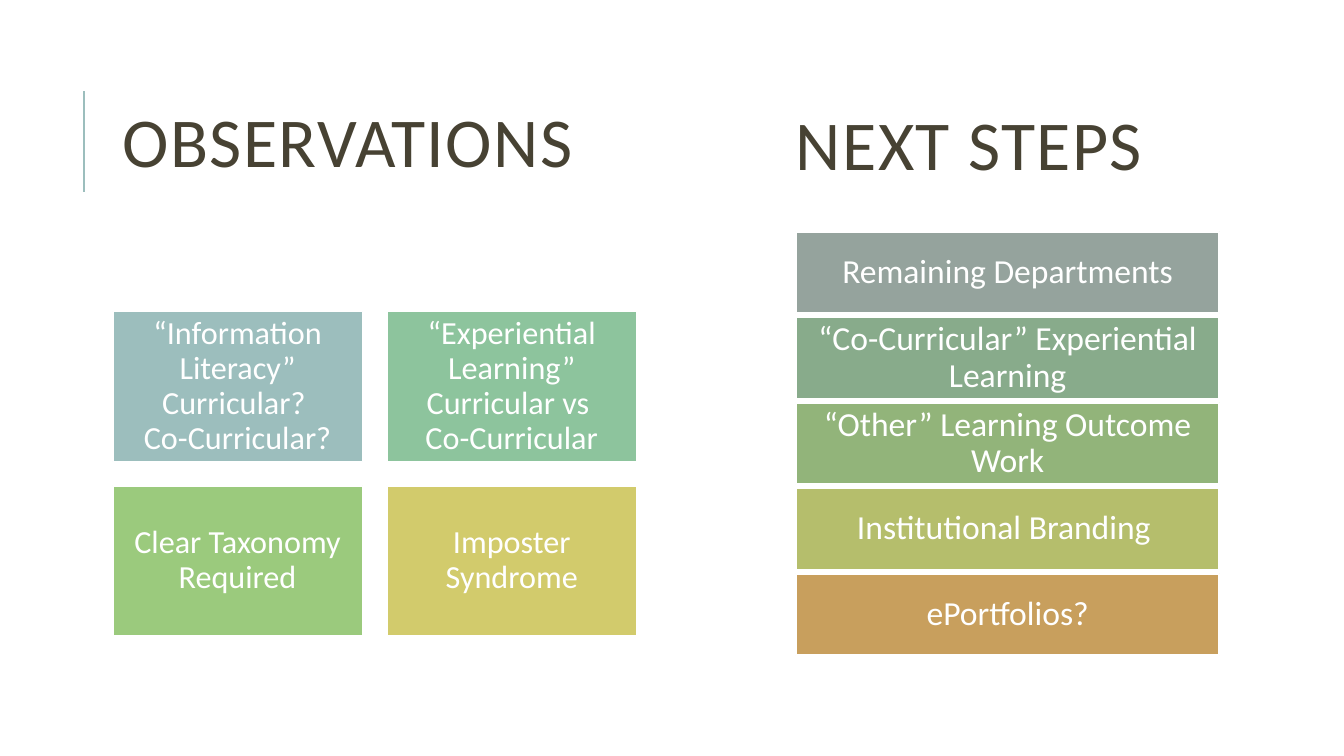
from pptx import Presentation
from pptx.dml.color import RGBColor
from pptx.enum.shapes import MSO_CONNECTOR, MSO_SHAPE
from pptx.enum.text import MSO_ANCHOR, PP_ALIGN
from pptx.oxml.ns import qn
from pptx.util import Cm, Pt
from lxml.etree import SubElement

OBSERVATIONS = [
    ("“Information Literacy” Curricular? \nCo-Curricular?", "9CBEBD"),
    ("“Experiential Learning” Curricular vs \nCo-Curricular", "8DC49D"),
    ("Clear Taxonomy Required", "9BCA7D"),
    ("Imposter Syndrome", "D2CB6C"),
]
NEXT_STEPS = [
    ("Remaining Departments", "95A39D"),
    ("“Co-Curricular” Experiential Learning", "88AB8B"),
    ("“Other” Learning Outcome Work", "92B47A"),
    ("Institutional Branding ", "B5BE6C"),
    ("ePortfolios?", "C89F5D"),
]


def color(hex_code):
    return RGBColor.from_string(hex_code)


def apply(target, formats):
    for name, value in formats.items():
        setattr(target, name, value)


def write(frame, words, size, hex_code, spacing, align, inset):
    apply(frame, {"word_wrap": True, "vertical_anchor": MSO_ANCHOR.MIDDLE,
                  "margin_left": Cm(inset[0]), "margin_right": Cm(inset[0]),
                  "margin_top": Cm(inset[1]), "margin_bottom": Cm(inset[1])})
    paragraph = frame.paragraphs[0]
    paragraph.text = words
    apply(paragraph, {"alignment": align, "line_spacing": spacing})
    for run in paragraph.runs:
        apply(run.font, {"name": "Calibri", "size": Pt(size)})
        run.font.color.rgb = color(hex_code)
    return paragraph


def add_heading(slide, words, left, top, width, height):
    heading = slide.shapes.add_textbox(Cm(left), Cm(top), Cm(width), Cm(height))
    paragraph = write(heading.text_frame, words, 50, "474233", 0.8,
                      PP_ALIGN.LEFT, (0.25, 0.13))
    for run in paragraph.runs:
        run.font._element.set("spc", "100")


def add_accent(slide, left, top, height):
    accent = slide.shapes.add_connector(
        MSO_CONNECTOR.STRAIGHT, Cm(left), Cm(top + height), Cm(left), Cm(top))
    accent.line.color.rgb = color("9CBEBD")
    accent.line.width = Pt(1.5)
    SubElement(accent._element.spPr, qn("a:effectLst"))


def add_tiles(slide, items, columns, gap, size, inset, left, top, width, height):
    rows = len(items) // columns
    tile_width = (width - gap * (columns - 1)) / columns
    tile_height = (height - gap * (rows - 1)) / rows
    for index, (words, fill) in enumerate(items):
        row, column = divmod(index, columns)
        tile = slide.shapes.add_shape(
            MSO_SHAPE.RECTANGLE,
            Cm(left + column * (tile_width + gap)),
            Cm(top + row * (tile_height + gap)),
            Cm(tile_width), Cm(tile_height))
        tile.shadow.inherit = False
        tile.fill.solid()
        tile.fill.fore_color.rgb = color(fill)
        tile.line.color.rgb = color("FFFFFF")
        tile.line.width = Pt(1.25)
        write(tile.text_frame, words, size, "FFFFFF", 0.9,
              PP_ALIGN.CENTER, (inset, inset))


def add_observations(slide, left, top, width):
    add_accent(slide, left - 0.73, top + 0.66, 2.54)
    add_heading(slide, "OBSERVATIONS", left, top, width, 4.17)
    add_tiles(slide, OBSERVATIONS, 2, 0.61, 23, 0.25,
              left, top + 6.22, width, 8.17)


def add_next_steps(slide, left, top, width):
    add_heading(slide, "NEXT STEPS", left, top, width, 4.17)
    add_tiles(slide, NEXT_STEPS, 1, 0.1, 24, 0.18,
              left + 0.25, top + 4.14, 10.67, 10.67)


def main():
    deck = Presentation()
    apply(deck, {"slide_width": Cm(33.87), "slide_height": Cm(19.05)})
    slide = deck.slides.add_slide(deck.slide_layouts[6])
    add_observations(slide, 2.84, 1.63, 13.21)
    add_next_steps(slide, 19.81, 1.7, 13.21)
    deck.save("out.pptx")


if __name__ == "__main__":
    main()
